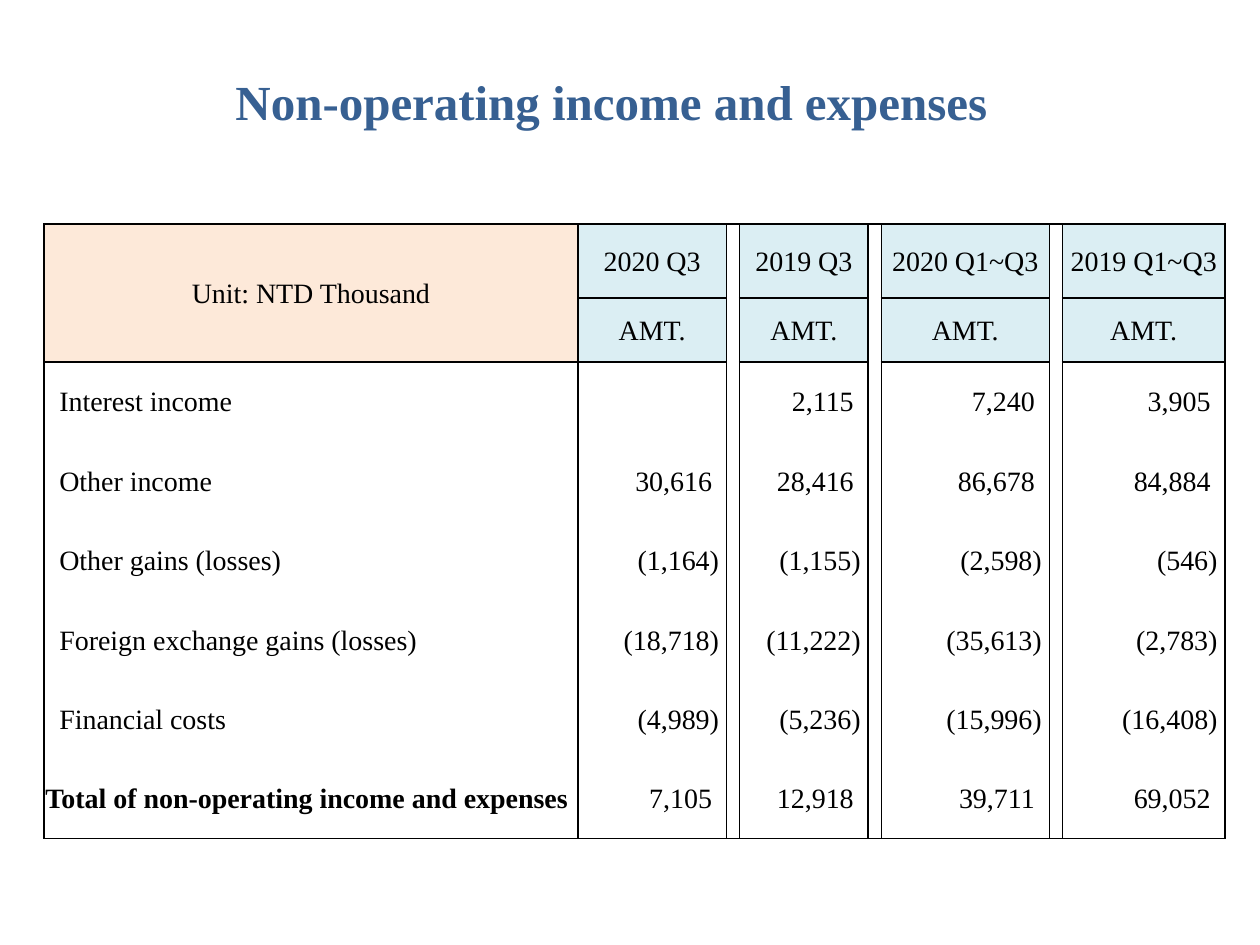
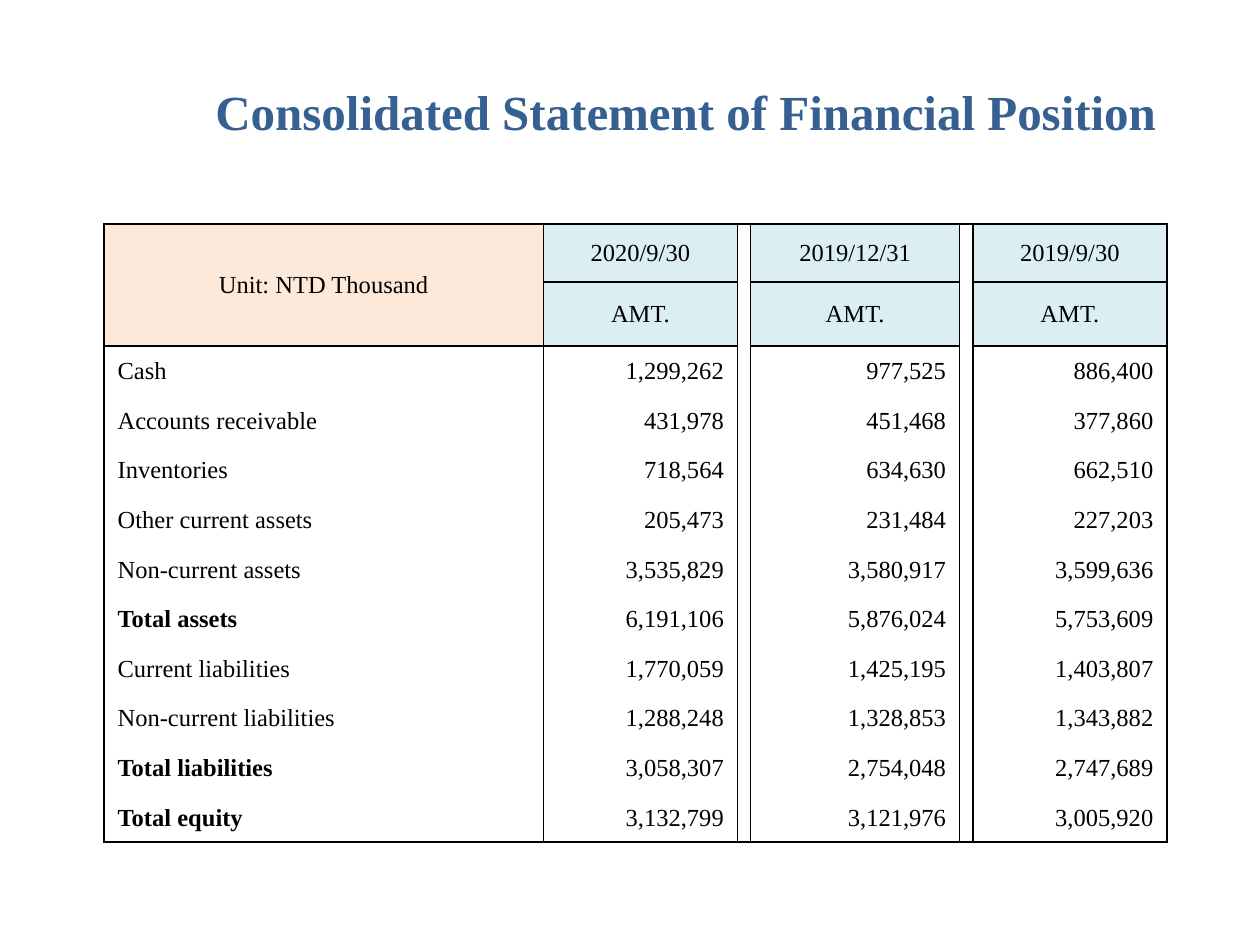
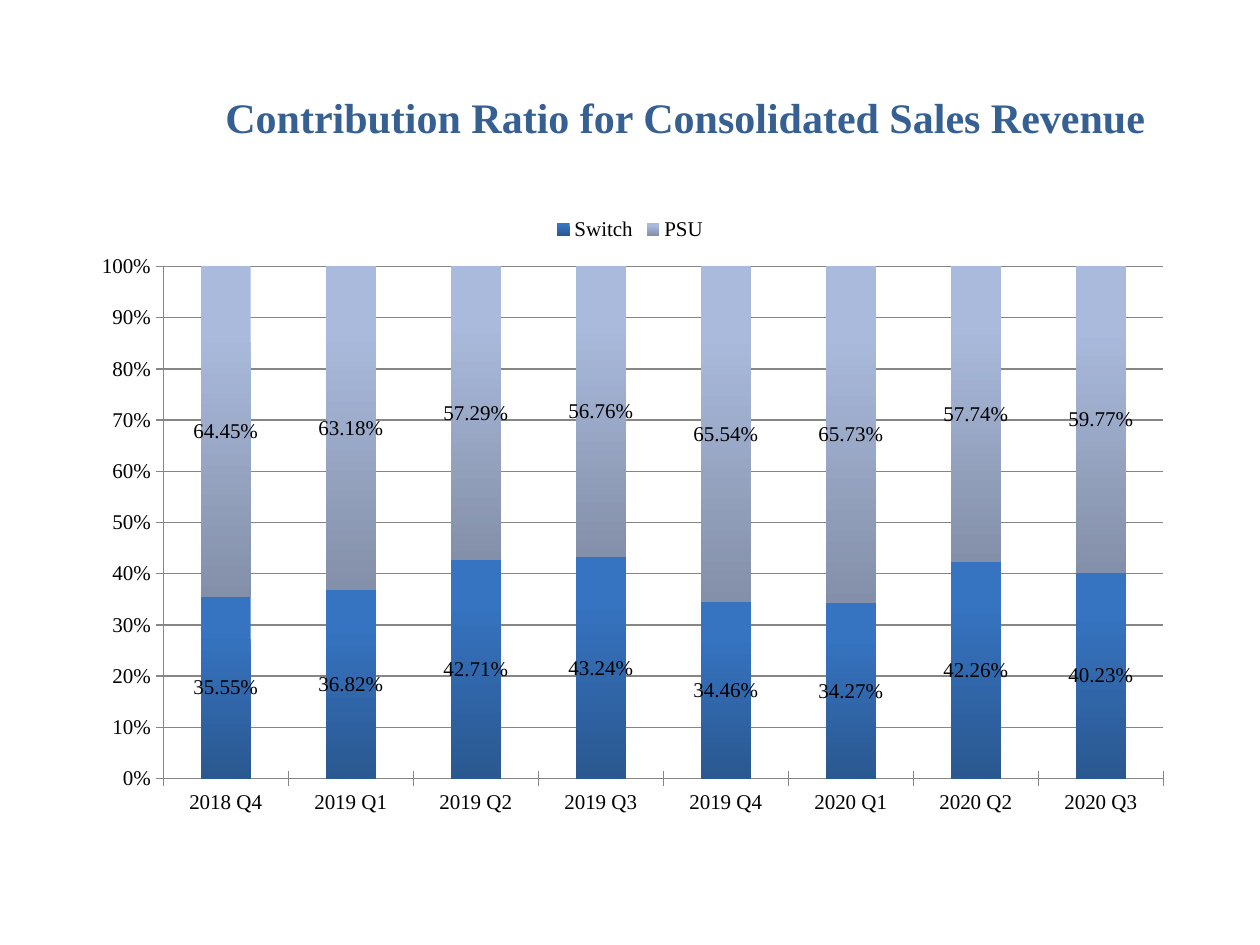
import pptx
import pptx.util
import pptx.chart.data
import pptx.dml.color
import pptx.enum.chart
import pptx.enum.text
import pptx.oxml.ns
from lxml import etree

Pt = pptx.util.Pt
qn = pptx.oxml.ns.qn
ALIGN = pptx.enum.text.PP_ALIGN
FACE = "Times New Roman"
COLORS = {
    "title": "376092",
    "text": "000000",
    "unit": "FDE9D9",
    "head": "DBEEF3",
    "grid": "868686",
}
SHADES = {"Switch": ("3673C0", "2A5890"), "PSU": ("AABADC", "8490A9")}
GAP = 7.5

INCOME = [
    ("Interest income", "", "2,115", "7,240", "3,905"),
    ("Other income", "30,616", "28,416", "86,678", "84,884"),
    ("Other gains (losses)", "(1,164)", "(1,155)", "(2,598)", "(546)"),
    ("Foreign exchange gains (losses)", "(18,718)", "(11,222)", "(35,613)", "(2,783)"),
    ("Financial costs", "(4,989)", "(5,236)", "(15,996)", "(16,408)"),
    ("Total of non-operating income and expenses", "7,105", "12,918", "39,711", "69,052"),
]
ASSETS = [
    ("Cash", "1,299,262", "977,525", "886,400"),
    ("Accounts receivable", "431,978", "451,468", "377,860"),
    ("Inventories", "718,564", "634,630", "662,510"),
    ("Other current assets", "205,473", "231,484", "227,203"),
    ("Non-current assets", "3,535,829", "3,580,917", "3,599,636"),
    ("Total assets", "6,191,106", "5,876,024", "5,753,609"),
    ("Current liabilities", "1,770,059", "1,425,195", "1,403,807"),
    ("Non-current liabilities", "1,288,248", "1,328,853", "1,343,882"),
    ("Total liabilities", "3,058,307", "2,754,048", "2,747,689"),
    ("Total equity", "3,132,799", "3,121,976", "3,005,920"),
]
TERMS = ["2018 Q4", "2019 Q1", "2019 Q2", "2019 Q3",
         "2019 Q4", "2020 Q1", "2020 Q2", "2020 Q3"]
SALES = {
    "Switch": [0.3555, 0.3682, 0.4271, 0.4324, 0.3446, 0.3427, 0.4226, 0.4023],
    "PSU": [0.6445, 0.6318, 0.5729, 0.5676, 0.6554, 0.6573, 0.5774, 0.5977],
}


def paint(name):
    return pptx.dml.color.RGBColor.from_string(COLORS.get(name, name))


def style(font, size, color="text", bold=False):
    font.name = FACE
    font.size = Pt(size)
    font.bold = bold
    font.color.rgb = paint(color)


def add_title(slide, text, box, size=28):
    frame = slide.shapes.add_textbox(*map(Pt, box)).text_frame
    frame.word_wrap = True
    frame.text = text
    style(frame.paragraphs[0].font, size, "title", True)


def add_edge(cell, side, shown):
    line = etree.SubElement(cell._tc.get_or_add_tcPr(), qn("a:ln" + side), w=str(Pt(1)))
    if shown:
        fill = etree.SubElement(line, qn("a:solidFill"))
        etree.SubElement(fill, qn("a:srgbClr"), val=COLORS["text"])
    else:
        etree.SubElement(line, qn("a:noFill"))


def fill_cell(cell, text, size, align, bold=False, fill=None, left=0.72, right=0.72):
    cell.margin_left, cell.margin_right = Pt(left), Pt(right)
    cell.margin_top, cell.margin_bottom = Pt(0.72), Pt(0)
    cell.vertical_anchor = pptx.enum.text.MSO_ANCHOR.MIDDLE
    cell.text = text
    part = cell.text_frame.paragraphs[0]
    part.alignment = align
    style(part.font, size, bold=bold)
    if fill:
        cell.fill.solid()
        cell.fill.fore_color.rgb = paint(fill)
    else:
        cell.fill.background()


def add_sheet(slide, spot, widths, heights, size, heads, body):
    cols = [widths[0], widths[1]]
    for width in widths[2:]:
        cols += [GAP, width]
    rows = heights[:2] + [heights[2]] * len(body)
    area = (*spot, sum(cols), sum(rows))
    table = slide.shapes.add_table(len(rows), len(cols), *map(Pt, area)).table
    table.first_row = table.horz_banding = False
    for col, width in zip(table.columns, cols):
        col.width = Pt(width)
    for row, height in zip(table.rows, rows):
        row.height = Pt(height)

    grid = [("Unit: NTD Thousand", *heads), ("", *["AMT."] * len(heads)), *body]
    for r, line in enumerate(grid):
        for c in range(len(cols)):
            cell = table.cell(r, c)
            gap = c > 0 and c % 2 == 0
            marks = {0, len(rows)} if gap else {0, 1, 2, len(rows)}
            for side, shown in zip("LRTB", (True, True, r in marks, r + 1 in marks)):
                add_edge(cell, side, shown)
            text = "" if gap else line[(c + 1) // 2]
            if gap:
                fill_cell(cell, text, size, ALIGN.LEFT)
            elif r < 2:
                fill_cell(cell, text, size, ALIGN.CENTER, fill="head" if c else "unit")
            elif c:
                space = 0 if text.endswith(")") else size / 4
                fill_cell(cell, text, size, ALIGN.RIGHT, right=4.32 + space)
            else:
                indent = 0 if text.startswith("Total of") else size / 2
                fill_cell(cell, text, size, ALIGN.LEFT,
                          bold=text.startswith("Total"), left=0.72 + indent)
    table.cell(0, 0).merge(table.cell(1, 0))


def place_plot(chart, **ratios):
    area = chart._chartSpace.chart.plotArea
    for old in area.findall(qn("c:layout")):
        area.remove(old)
    layout = etree.Element(qn("c:layout"))
    area.insert(0, layout)
    manual = etree.SubElement(layout, qn("c:manualLayout"))
    etree.SubElement(manual, qn("c:layoutTarget"), val="inner")
    for key in "xy":
        etree.SubElement(manual, qn(f"c:{key}Mode"), val="edge")
    for key, ratio in ratios.items():
        etree.SubElement(manual, qn("c:" + key), val=str(ratio))


def style_axis(axis):
    axis.major_tick_mark = pptx.enum.chart.XL_TICK_MARK.CROSS
    axis.format.line.color.rgb = paint("grid")
    style(axis.tick_labels.font, 12)


def style_bars(bars):
    bars.format.fill.gradient()
    bars.format.fill.gradient_angle = 270
    stops = bars.format.fill.gradient_stops
    for stop, shade, place in zip(stops, SHADES[bars.name], (0.2, 1)):
        stop.color.rgb = paint(shade)
        stop.position = place
    labels = bars.data_labels
    labels.show_value = True
    labels.number_format = "0.00%"
    labels.number_format_is_linked = False
    style(labels.font, 12)


def add_bars(slide, box):
    data = pptx.chart.data.CategoryChartData(number_format="0.00%")
    data.categories = TERMS
    for name, values in SALES.items():
        data.add_series(name, values)
    kind = pptx.enum.chart.XL_CHART_TYPE.COLUMN_STACKED
    chart = slide.shapes.add_chart(kind, *map(Pt, box), data).chart
    chart.has_title = False
    style(chart.font, 12)
    chart.has_legend = True
    chart.legend.position = pptx.enum.chart.XL_LEGEND_POSITION.TOP
    chart.legend.include_in_layout = False
    style(chart.legend.font, 12)

    plot = chart.plots[0]
    plot.gap_width, plot.overlap = 150, 100
    plot.vary_by_categories = False
    for bars in plot.series:
        style_bars(bars)

    style_axis(chart.category_axis)
    scale = chart.value_axis
    style_axis(scale)
    scale.minimum_scale, scale.maximum_scale, scale.major_unit = 0, 1, 0.1
    scale.tick_labels.number_format = "0%"
    scale.tick_labels.number_format_is_linked = False
    scale.has_major_gridlines = True
    scale.major_gridlines.format.line.color.rgb = paint("grid")
    place_plot(chart, x=0.08, y=0.1, w=0.9, h=0.82)


def main():
    deck = pptx.Presentation()
    deck.slide_width, deck.slide_height = Pt(720), Pt(540)
    gains, status, ratio = [deck.slides.add_slide(deck.slide_layouts[6]) for _ in range(3)]

    add_title(gains, "Non-operating income and expenses", (127.5, 37.5, 584, 70.5))
    add_sheet(gains, (25.2, 128), [305, 85, 73.5, 96, 93], [42.3, 36.6, 45.4], 16,
              ["2020 Q3", "2019 Q3", "2020 Q1~Q3", "2019 Q1~Q3"], INCOME)

    add_title(status, "Consolidated Statement of Financial Position", (116, 43.2, 566.5, 90))
    add_sheet(status, (59.5, 128), [251, 111, 119.5, 111], [33.1, 36.6, 28.35], 14,
              ["2020/9/30", "2019/12/31", "2019/9/30"], ASSETS)

    add_title(ratio, "Contribution Ratio for Consolidated Sales Revenue",
              (121.7, 49, 544.3, 85), 24)
    add_bars(ratio, (42.5, 116.6, 635, 357))
    deck.save("out.pptx")


if __name__ == "__main__":
    main()
